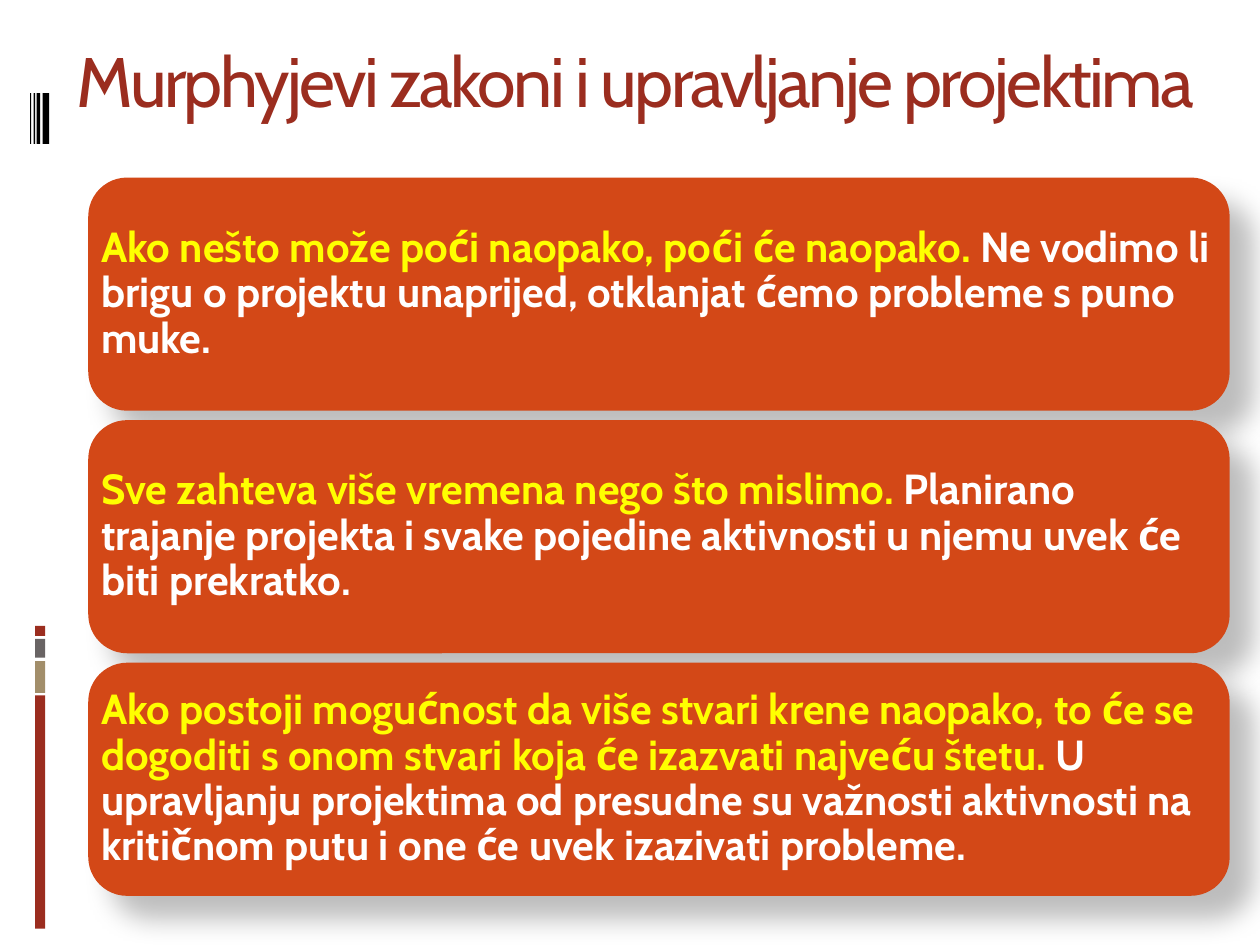
from lxml import etree
from pptx import Presentation
from pptx import util as u
from pptx.dml.color import RGBColor
from pptx.enum import shapes, text
from pptx.oxml.ns import qn

COLOURS = {
    "rust": "9B2D1F",
    "sand": "A28E6A",
    "grey": "696464",
    "black": "000000",
    "card": "D34817",
    "law": "FFFF00",
    "comment": "FFFFFF",
}

# Side decoration: left, top, width, height in cm, and colour
COLOUR_BLOCKS = [
    (0.71, 14.02, 0.2, 4.7, "rust"),
    (0.71, 13.33, 0.2, 0.64, "sand"),
    (0.71, 12.88, 0.2, 0.38, "grey"),
    (0.71, 12.62, 0.2, 0.2, "rust"),
]
STRIPES = [(0.86, 0.13), (0.74, 0.07), (0.68, 0.03), (0.61, 0.02)]

# Each law, followed by what it means for a project
LAWS = [
    ("Ako nešto može poći naopako, poći će naopako. ",
     "Ne vodimo li brigu o projektu unaprijed, otklanjat ćemo probleme s puno muke."),
    ("Sve zahteva više vremena nego što mislimo. ",
     "Planirano trajanje projekta i svake pojedine aktivnosti u njemu uvek će "
     "biti prekratko."),
    ("Ako postoji mogućnost da više stvari krene naopako, to će se dogoditi "
     "s onom stvari koja će izazvati najveću štetu.",
     " U upravljanju projektima od presudne su važnosti aktivnosti na kritičnom "
     "putu i one će uvek izazivati probleme."),
]
CARD_TOP, CARD_PITCH = 3.58, 4.89


def add_text(paragraph, words, *, size, colour, font="Cabin", bold=False, spacing=None):
    run = paragraph.add_run()
    run.text = words
    run.font.name = font
    run.font.size = u.Pt(size)
    run.font.bold = bold
    run.font.color.rgb = RGBColor.from_string(COLOURS[colour])
    if spacing is not None:
        run._r.get_or_add_rPr().set("spc", str(int(spacing * 100)))


class SlideBuilder:
    def __init__(self, slide):
        self.slide = slide
        self.title_size = 40
        self.body_size = 24

    def block(self, left, top, width, height, colour, kind=shapes.MSO_SHAPE.RECTANGLE):
        block = self.slide.shapes.add_shape(
            kind, u.Cm(left), u.Cm(top), u.Cm(width), u.Cm(height))
        block.shadow.inherit = False
        block.fill.solid()
        block.fill.fore_color.rgb = RGBColor.from_string(COLOURS[colour])
        block.line.fill.background()
        return block

    def title(self, words):
        box = self.slide.shapes.add_textbox(
            u.Cm(0.43), u.Cm(0.64), u.Cm(24.77), u.Cm(3.18))
        frame = box.text_frame
        frame.word_wrap = True
        heading = frame.paragraphs[0]
        heading.alignment = text.PP_ALIGN.CENTER
        add_text(heading, words, size=self.title_size, colour="rust", spacing=-1.5)

    def card(self, top, law, comment):
        card = self.block(1.78, top, 23.01, 4.7, "card",
                          shapes.MSO_SHAPE.ROUNDED_RECTANGLE)
        self.soft_shadow(card)
        frame = card.text_frame
        frame.word_wrap = True
        frame.vertical_anchor = text.MSO_ANCHOR.MIDDLE
        # The rounded corners already push the text inwards
        frame.margin_left = frame.margin_right = u.Cm(0.03)
        frame.margin_top = frame.margin_bottom = u.Cm(0.03)
        body = frame.paragraphs[0]
        body.alignment = text.PP_ALIGN.LEFT
        body.line_spacing = 0.9
        for words, colour in ((law, "law"), (comment, "comment")):
            add_text(body, words, size=self.body_size, colour=colour, bold=True)

    def soft_shadow(self, shape):
        effects = shape._element.spPr.find(qn("a:effectLst"))
        shadow = etree.SubElement(
            effects, qn("a:outerShdw"), blurRad=str(u.Pt(15)), dist=str(u.Pt(18)),
            dir=str(45 * 60000), rotWithShape="0")
        tint = etree.SubElement(shadow, qn("a:srgbClr"), val=COLOURS["black"])
        etree.SubElement(tint, qn("a:alpha"), val="26000")


def main():
    deck = Presentation()
    deck.slide_width, deck.slide_height = u.Cm(25.4), u.Cm(19.05)
    builder = SlideBuilder(deck.slides.add_slide(deck.slide_layouts[6]))

    # Side decoration
    for block in COLOUR_BLOCKS:
        builder.block(*block)
    for left, width in STRIPES:
        builder.block(left, 1.88, width, 1.02, "black")

    # Title
    builder.title("Murphyjevi zakoni i upravljanje projektima")

    # Cards with the laws
    for row, (law, comment) in enumerate(LAWS):
        builder.card(CARD_TOP + row * CARD_PITCH, law, comment)

    deck.save("out.pptx")


if __name__ == "__main__":
    main()
